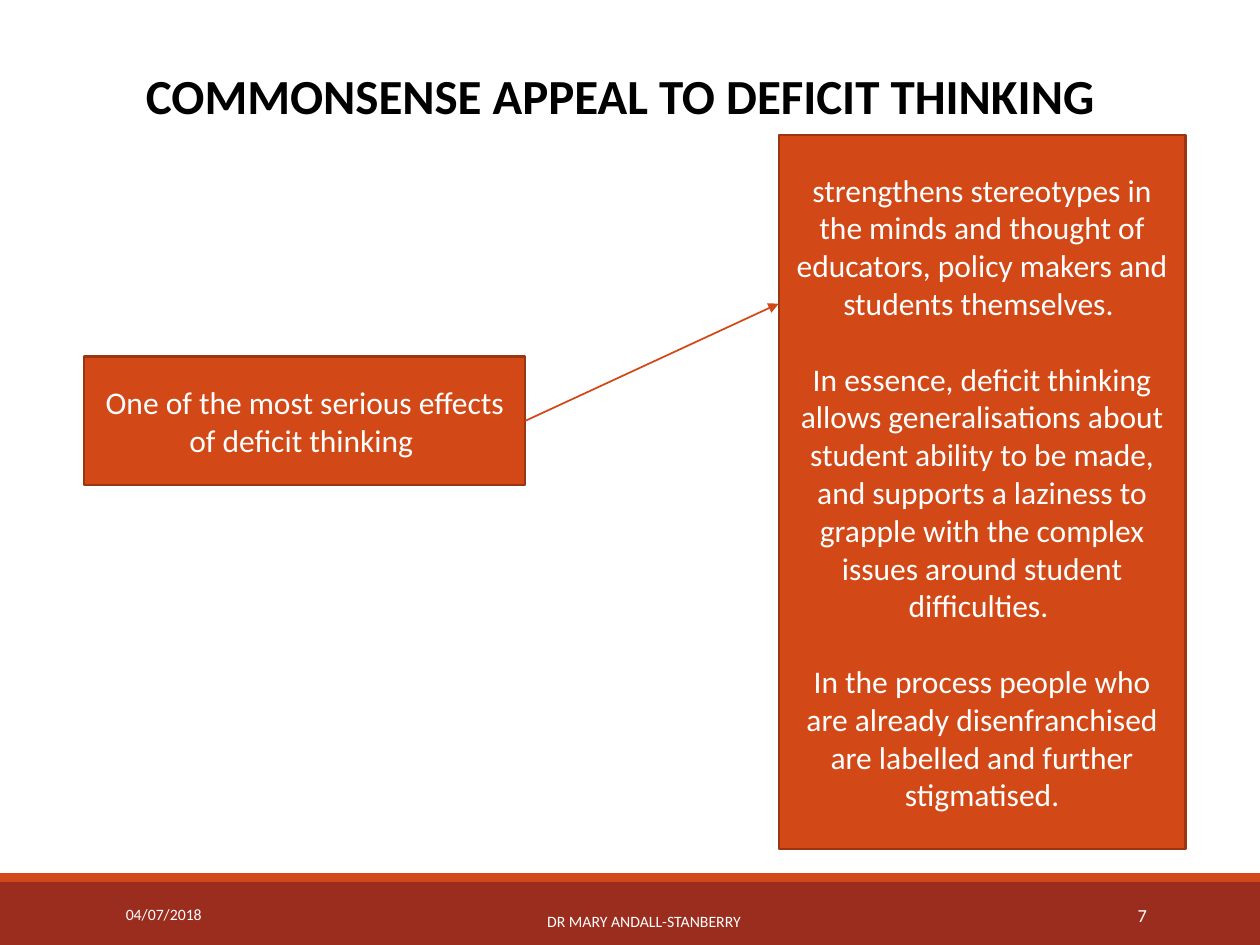
"""Build the slide on the commonsense appeal of deficit thinking."""
from dataclasses import dataclass, field
from typing import Any

from lxml import etree
from pptx import Presentation
from pptx import util as u
from pptx.dml.color import RGBColor
from pptx.enum import shapes, text
from pptx.oxml.ns import qn

COLUMNS, ROWS = 100, 75
CELL = u.Inches(0.1)
COLORS = {
    "orange": "D34817",
    "outline": "9C3511",
    "brick": "9B2D1F",
    "white": "FFFFFF",
    "black": "000000",
}
ALIGN = text.PP_ALIGN


@dataclass(frozen=True)
class Area:
    """A rectangle counted in grid columns and rows."""
    column: float
    row: float
    columns: float
    rows: float

    def box(self) -> tuple[int, ...]:
        """Return left, top, width and height."""
        return tuple(cells(n) for n in (self.column, self.row, self.columns, self.rows))


@dataclass(frozen=True)
class Label:
    """Text with its format."""
    area: Area
    paragraphs: list[str]
    size: float
    align: Any = ALIGN.CENTER
    color: str = "white"
    bold: bool = False
    gap: float = 0
    frame: dict[str, Any] = field(
        default_factory=lambda: {"vertical_anchor": text.MSO_ANCHOR.MIDDLE})


def cells(count: float) -> int:
    """Convert a count of grid cells to a length."""
    return round(count * CELL)


def rgb(name: str) -> RGBColor:
    """Look up a named colour."""
    return RGBColor.from_string(COLORS[name])


def apply(target: Any, values: dict[str, Any]) -> None:
    """Set attributes from a dict of format values."""
    for name, value in values.items():
        setattr(target, name, value)


def write(shape: Any, label: Label) -> None:
    """Fill a shape with formatted paragraphs."""
    frame = shape.text_frame
    apply(frame, {"word_wrap": True, **label.frame})
    for index, words in enumerate(label.paragraphs):
        paragraph = frame.add_paragraph() if index else frame.paragraphs[0]
        apply(paragraph, {"alignment": label.align,
                          "space_before": u.Pt(label.gap if index else 0)})
        run = paragraph.add_run()
        run.text = words
        apply(run.font, {"name": "Calibri", "size": u.Pt(label.size), "bold": label.bold})
        run.font.color.rgb = rgb(label.color)


def draw_rectangle(slide: Any, area: Area, fill: str, outline: str | None = None) -> Any:
    """Draw a filled rectangle with an optional outline."""
    shape = slide.shapes.add_shape(shapes.MSO_SHAPE.RECTANGLE, *area.box())
    shape.shadow.inherit = False
    shape.fill.solid()
    shape.fill.fore_color.rgb = rgb(fill)
    if outline:
        shape.line.color.rgb = rgb(outline)
        shape.line.width = u.Pt(1.25)
    else:
        shape.line.fill.background()
    return shape


def draw_card(slide: Any, label: Label) -> Any:
    """Draw an outlined orange card with text."""
    card = draw_rectangle(slide, label.area, "orange", "outline")
    write(card, label)
    return card


def draw_arrow(slide: Any, source: Any, column: float, row: float) -> None:
    """Draw an arrow from the right side of a card to a grid point."""
    arrow = slide.shapes.add_connector(
        shapes.MSO_CONNECTOR.STRAIGHT, 0, 0, cells(column), cells(row))
    arrow.begin_connect(source, 3)
    arrow.line.color.rgb = rgb("orange")
    arrow.line.width = u.Pt(1)
    etree.SubElement(arrow.line._get_or_add_ln(), qn("a:tailEnd"), type="triangle")
    etree.SubElement(arrow._element.spPr, qn("a:effectLst"))


BANDS = [(Area(0, 70, COLUMNS, 5), "brick"), (Area(0, 69.3, COLUMNS, 0.7), "orange")]
LABELS = [
    Label(Area(30.2, 71.6, 41.8, 3.1), ["DR MARY ANDALL-STANBERRY"], 9),
    Label(Area(81.2, 70.6, 10.8, 4), ["7"], 10.5, ALIGN.RIGHT),
    Label(Area(9, 70.6, 20.3, 4), ["04/07/2018"], 9, ALIGN.LEFT),
    Label(Area(10.6, 0, 83.5, 22.6), ["COMMONSENSE APPEAL TO DEFICIT THINKING"], 28,
          ALIGN.LEFT, "black", True,
          frame={"vertical_anchor": text.MSO_ANCHOR.TOP, "margin_top": cells(5.2)}),
]
CAUSE = Label(Area(6.7, 28.3, 35, 10.2),
              ["One of the most serious effects of deficit thinking "], 18)
EFFECTS = Label(Area(61.8, 10.7, 32.3, 56.7), [
    "strengthens stereotypes in the minds and thought of educators, policy makers "
    "and students themselves. ",
    "In essence, deficit thinking allows generalisations about student ability to be "
    "made, and supports a laziness to grapple with the complex issues around student "
    "difficulties. ",
    "In the process people who are already disenfranchised are labelled and further "
    "stigmatised.",
], 18, gap=21.6)


def main() -> None:
    """Build and save the presentation."""
    presentation = Presentation()
    apply(presentation, {"slide_width": cells(COLUMNS), "slide_height": cells(ROWS)})
    slide = presentation.slides.add_slide(presentation.slide_layouts[6])
    for area, fill in BANDS:
        draw_rectangle(slide, area, fill)
    for label in LABELS:
        write(slide.shapes.add_textbox(*label.area.box()), label)
    draw_card(slide, EFFECTS)
    cause = draw_card(slide, CAUSE)
    draw_arrow(slide, cause, EFFECTS.area.column, 24.1)
    presentation.save("out.pptx")


if __name__ == "__main__":
    main()
